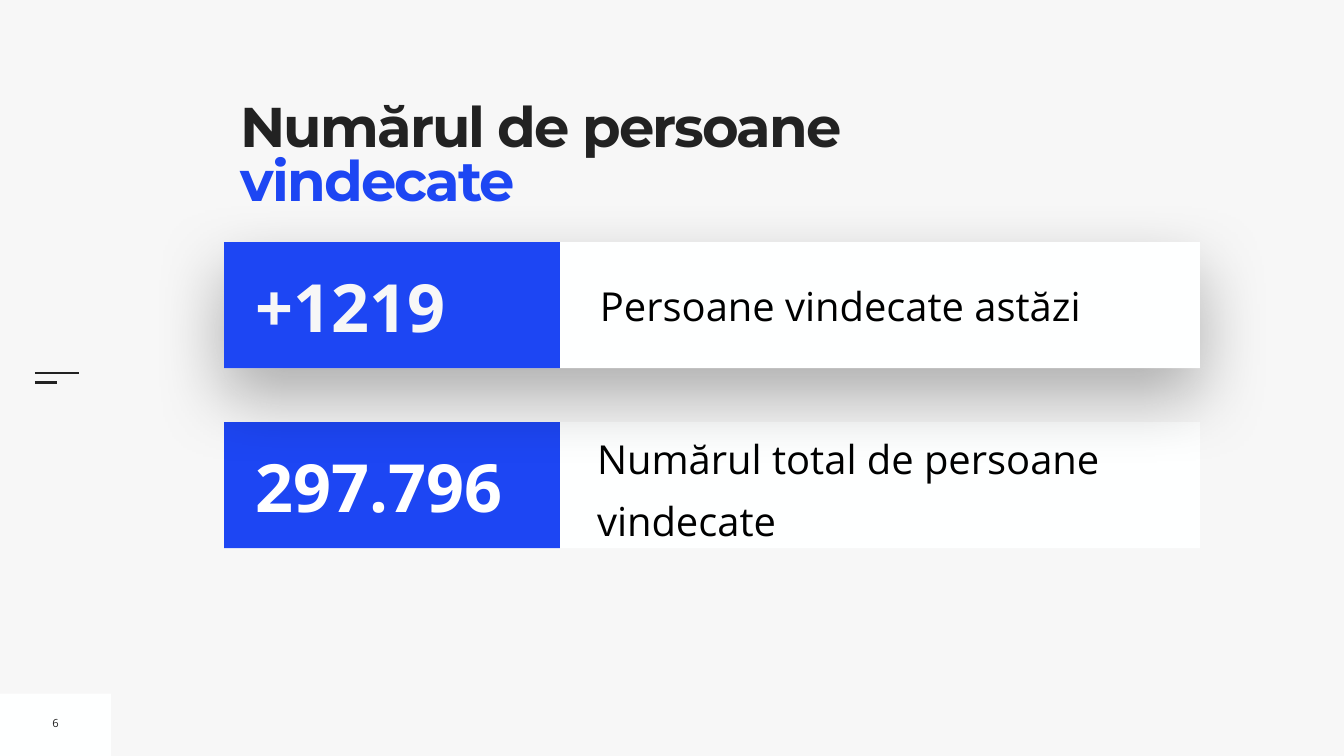
from dataclasses import dataclass

from lxml.etree import SubElement
from pptx import Presentation
from pptx.dml.color import RGBColor
from pptx.enum.shapes import MSO_CONNECTOR as Connector, MSO_SHAPE as Preset
from pptx.enum.text import MSO_ANCHOR as Anchor, PP_ALIGN as Align
from pptx.oxml.ns import qn
from pptx.shapes.autoshape import Shape
from pptx.slide import Slide
from pptx.util import Pt

COLOURS = {
    "background": "F7F7F7",
    "panel": "FEFFFF",
    "blue": "1D46F3",
    "dark": "222222",
    "black": "000000",
    "white": "FFFFFF",
}
CARD_LEFT, CARD_HEIGHT, NUMBER_WIDTH = 320, 180, 480


@dataclass(frozen=True)
class Box:
    left: float
    top: float
    width: float
    height: float


@dataclass(frozen=True)
class Card:
    top: float
    width: float
    number: str
    number_colour: str
    label: str
    label_box: Box
    label_inset: float
    line_spacing: float
    space_before: float
    shadow: bool


def colour(name: str) -> RGBColor:
    return RGBColor.from_string(COLOURS[name])


def add_panel(slide: Slide, box: Box, fill: str) -> Shape:
    shape = slide.shapes.add_shape(
        Preset.RECTANGLE, Pt(box.left), Pt(box.top), Pt(box.width), Pt(box.height)
    )
    shape.shadow.inherit = False
    shape.fill.solid()
    shape.fill.fore_color.rgb = colour(fill)
    shape.line.fill.background()
    return shape


def add_shadow(shape: Shape) -> None:
    effects = shape._element.spPr.find(qn("a:effectLst"))
    shadow = SubElement(
        effects, qn("a:outerShdw"), blurRad=str(Pt(100)), dist=str(Pt(40)),
        dir="5400000", rotWithShape="0",
    )
    shade = SubElement(shadow, qn("a:srgbClr"), val=COLOURS["black"])
    SubElement(shade, qn("a:alpha"), val="30000")


def add_rule(slide: Slide, left: float, top: float, length: float) -> None:
    rule = slide.shapes.add_connector(
        Connector.STRAIGHT, Pt(left), Pt(top), Pt(left + length), Pt(top)
    )
    rule.line.color.rgb = colour("dark")
    rule.line.width = Pt(3)
    SubElement(rule._element.spPr, qn("a:effectLst"))


def add_text(
    slide: Slide,
    box: Box,
    runs: list[tuple[str, str]],
    *,
    size: float,
    font: str = "Open Sans",
    bold: bool = False,
    inset: float = 7.2,
    anchor: Anchor = Anchor.MIDDLE,
    align: Align = Align.LEFT,
    wrap: bool = True,
    line_spacing: float = 1,
    space_before: float = 0,
    tracking: float = 0,
) -> None:
    shape = slide.shapes.add_textbox(
        Pt(box.left), Pt(box.top), Pt(box.width), Pt(box.height)
    )
    frame = shape.text_frame
    frame.word_wrap = wrap
    frame.vertical_anchor = anchor
    frame.margin_left = frame.margin_right = Pt(inset)
    frame.margin_top = frame.margin_bottom = Pt(inset)
    paragraph = frame.paragraphs[0]
    paragraph.alignment = align
    paragraph.line_spacing = line_spacing
    paragraph.space_before = Pt(space_before)
    for text, name in runs:
        run = paragraph.add_run()
        run.text = text
        run.font.name = font
        run.font.size = Pt(size)
        run.font.bold = bold
        run.font.color.rgb = colour(name)
        if tracking:
            run._r.get_or_add_rPr().set("spc", str(round(tracking * 100)))


def add_card(slide: Slide, card: Card) -> None:
    panel = add_panel(
        slide, Box(CARD_LEFT, card.top, card.width, CARD_HEIGHT), "panel"
    )
    if card.shadow:
        add_shadow(panel)
    add_text(
        slide, card.label_box, [(card.label, "black")], size=57,
        inset=card.label_inset, line_spacing=card.line_spacing,
        space_before=card.space_before,
    )
    add_panel(slide, Box(CARD_LEFT, card.top, NUMBER_WIDTH, CARD_HEIGHT), "blue")
    add_text(
        slide, Box(CARD_LEFT + 38, card.top + 25.5, 434, 130),
        [(card.number, card.number_colour)], size=95, bold=True,
    )


CARDS = [
    Card(603, 1394, "297.796", "white", "Numărul total de persoane vindecate",
         Box(853, 604, 860, 170), 0, 1.3, 20, False),
    Card(346, 1394, "+1219", "background", "Persoane vindecate astăzi",
         Box(850, 394, 847, 84), 7.2, 1, 0, True),
]


def main() -> None:
    presentation = Presentation()
    presentation.slide_width = Pt(1920)
    presentation.slide_height = Pt(1080)
    slide = presentation.slides.add_slide(presentation.slide_layouts[6])
    slide.background.fill.solid()
    slide.background.fill.fore_color.rgb = colour("background")

    add_panel(slide, Box(0, 991, 158.5, 89), "panel")
    add_rule(slide, 50, 533.5, 63)
    add_rule(slide, 50, 546.5, 31.5)
    add_text(
        slide, Box(343.5, 149, 937, 196.5),
        [("Numărul de persoane ", "dark"), ("vindecate", "blue")],
        size=80, font="Montserrat", bold=True, inset=0, anchor=Anchor.TOP,
        line_spacing=0.8, tracking=-2.7,
    )
    add_text(
        slide, Box(67, 1014.5, 24.5, 36.5), [("6", "dark")], size=16,
        align=Align.CENTER, wrap=False,
    )
    for card in CARDS:
        add_card(slide, card)

    presentation.save("out.pptx")


if __name__ == "__main__":
    main()
